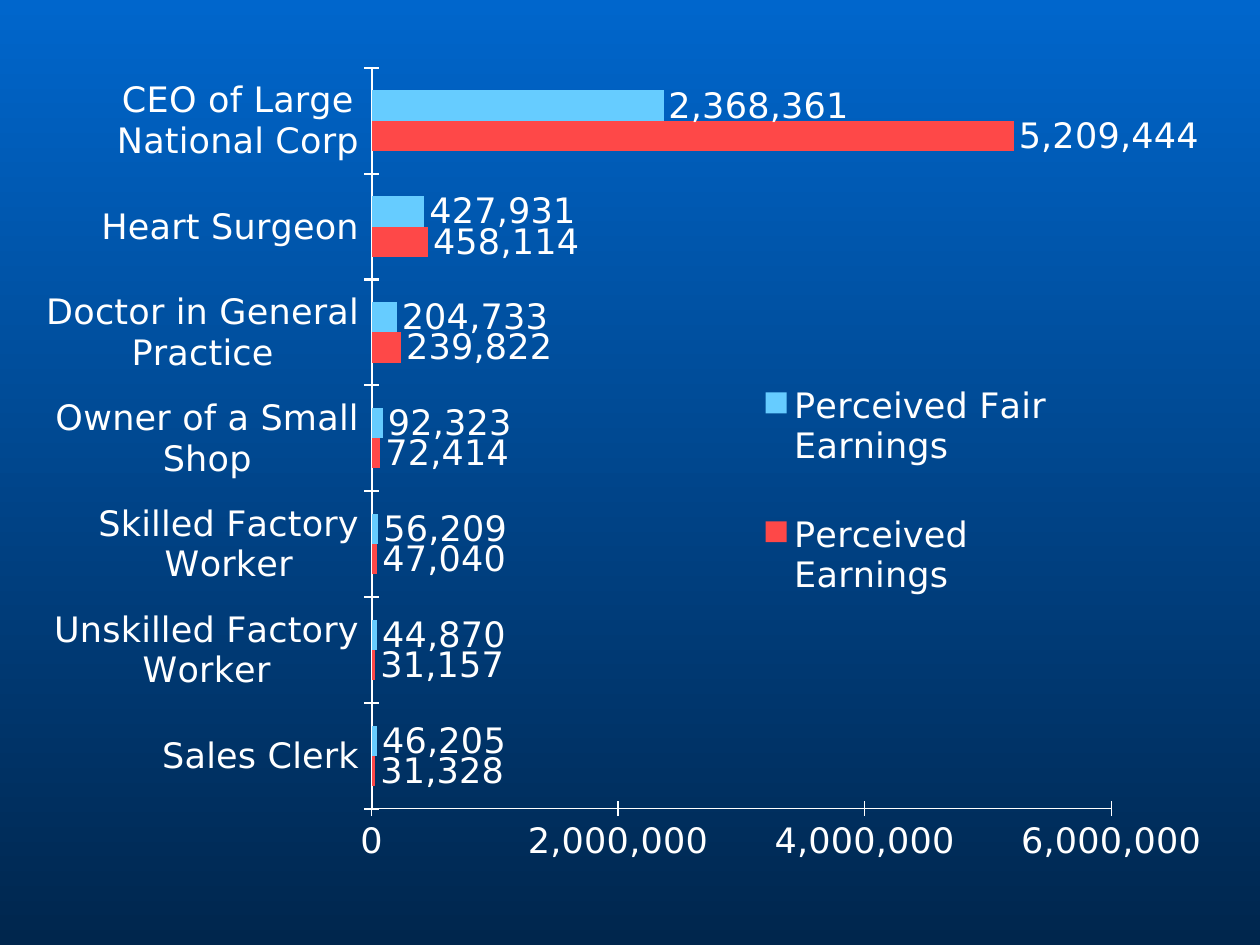
from dataclasses import dataclass

from pptx import Presentation
from pptx.chart.data import CategoryChartData as ChartData
from pptx.dml.color import RGBColor as Color
from pptx.enum.chart import XL_CHART_TYPE as ChartType
from pptx.enum.chart import XL_LABEL_POSITION as LabelPosition
from pptx.enum.chart import XL_LEGEND_POSITION as LegendPosition
from pptx.enum.chart import XL_TICK_MARK as TickMark
from pptx.oxml import parse_xml
from pptx.oxml.ns import nsdecls, qn
from pptx.util import Pt


@dataclass(frozen=True)
class Theme:
    font: str = "DejaVu Sans"
    text_size: int = 20
    text: Color = Color(0xFF, 0xFF, 0xFF)
    background_top: Color = Color(0x00, 0x66, 0xCC)
    background_bottom: Color = Color(0x00, 0x26, 0x4D)
    actual: Color = Color(0xFE, 0x48, 0x48)
    fair: Color = Color(0x66, 0xCC, 0xFF)


THEME = Theme()
NUMBER_FORMAT = "#,##0"
OCCUPATIONS = [
    "Sales Clerk",
    "Unskilled Factory Worker",
    "Skilled Factory Worker",
    "Owner of a Small Shop",
    "Doctor in General Practice",
    "Heart Surgeon",
    "CEO of Large National Corp",
]
EARNINGS = [
    ("Perceived Earnings", THEME.actual,
     [31328, 31157, 47040, 72414, 239822, 458114, 5209444]),
    ("Perceived Fair Earnings", THEME.fair,
     [46205, 44870, 56209, 92323, 204733, 427931, 2368361]),
]


def paint_background(slide):
    fill = slide.background.fill
    fill.gradient()
    fill.gradient_angle = 270
    colors = (THEME.background_top, THEME.background_bottom)
    for position, (stop, color) in enumerate(zip(fill.gradient_stops, colors)):
        stop.position = position
        stop.color.rgb = color


def format_font(font):
    font.name = THEME.font
    font.size = Pt(THEME.text_size)
    font.bold = False
    font.color.rgb = THEME.text


def set_layout(parent, index, left, top, width, height, inner=False):
    previous = parent.find(qn("c:layout"))
    if previous is not None:
        parent.remove(previous)
    target = '<c:layoutTarget val="inner"/>' if inner else ""
    parent.insert(index, parse_xml(
        f'<c:layout {nsdecls("c")}><c:manualLayout>{target}'
        '<c:xMode val="edge"/><c:yMode val="edge"/>'
        f'<c:x val="{left}"/><c:y val="{top}"/>'
        f'<c:w val="{width}"/><c:h val="{height}"/>'
        '</c:manualLayout></c:layout>'))


def format_axis(axis, line_width):
    axis.has_major_gridlines = False
    axis.major_tick_mark = TickMark.CROSS
    axis.minor_tick_mark = TickMark.NONE
    axis.format.line.color.rgb = THEME.text
    axis.format.line.width = Pt(line_width)
    format_font(axis.tick_labels.font)


def format_series(series, color):
    series.format.fill.solid()
    series.format.fill.fore_color.rgb = color
    series.format.line.fill.background()
    series.invert_if_negative = False
    labels = series.data_labels
    labels.show_value = True
    labels.number_format = NUMBER_FORMAT
    labels.number_format_is_linked = False
    labels.position = LabelPosition.OUTSIDE_END
    format_font(labels.font)


def add_legend(chart):
    chart.has_legend = True
    chart.legend.position = LegendPosition.RIGHT
    chart.legend.include_in_layout = False
    format_font(chart.legend.font)
    set_layout(chart.element.find(".//" + qn("c:legend")), 1,
               0.61, 0.34, 0.25, 0.35)


def add_earnings_chart(slide):
    data = ChartData(number_format=NUMBER_FORMAT)
    data.categories = OCCUPATIONS
    for name, _, values in EARNINGS:
        data.add_series(name, values)
    chart = slide.shapes.add_chart(
        ChartType.BAR_CLUSTERED, Pt(24.5), Pt(23.8), Pt(671), Pt(498.2), data
    ).chart
    chart.has_title = False
    format_font(chart.font)

    plot = chart.plots[0]
    plot.gap_width = 150
    plot.overlap = 0
    plot.vary_by_categories = False
    for series, (_, color, _) in zip(plot.series, EARNINGS):
        format_series(series, color)

    format_axis(chart.category_axis, 1.25)
    format_axis(chart.value_axis, 0.75)
    chart.value_axis.minimum_scale = 0
    chart.value_axis.maximum_scale = 6000000
    chart.value_axis.major_unit = 2000000
    chart.value_axis.tick_labels.number_format = NUMBER_FORMAT
    chart.value_axis.tick_labels.number_format_is_linked = False

    set_layout(chart.element.find(".//" + qn("c:plotArea")), 0,
               0.28, 0.03, 0.63, 0.85, inner=True)
    add_legend(chart)


def main():
    presentation = Presentation()
    presentation.slide_width = Pt(720)
    presentation.slide_height = Pt(540)
    slide = presentation.slides.add_slide(presentation.slide_layouts[6])
    paint_background(slide)
    add_earnings_chart(slide)
    presentation.save("out.pptx")


if __name__ == "__main__":
    main()
